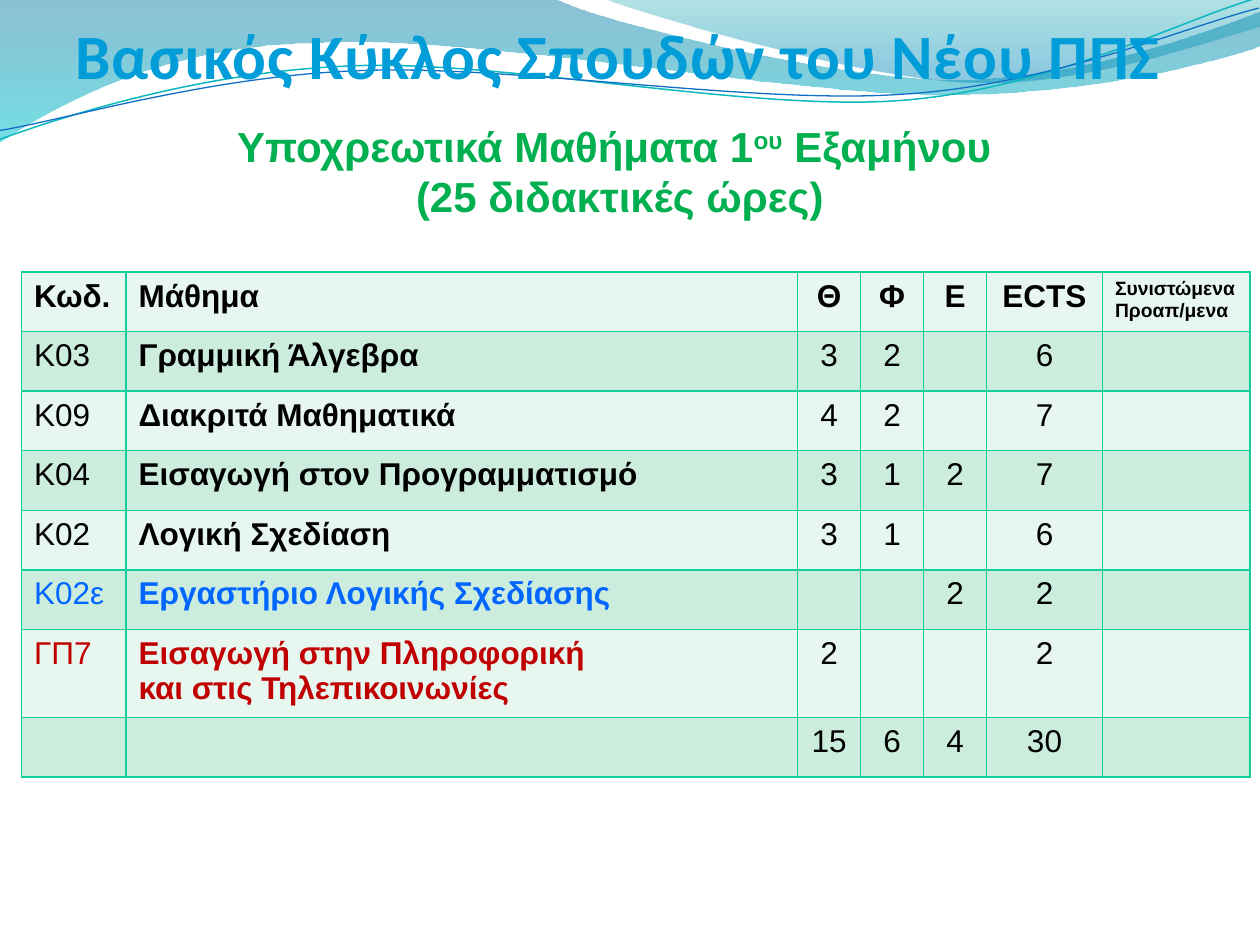
from copy import deepcopy
from dataclasses import dataclass
from lxml.etree import SubElement as Sub
from pptx import Presentation
from pptx.dml.color import RGBColor as RGB
from pptx.enum.text import MSO_ANCHOR as Anchor, PP_ALIGN as Align
from pptx.oxml.ns import qn
from pptx.util import Inches, Pt


@dataclass
class Theme:
    title: str = "009DD9"
    green: str = "00B050"
    black: str = "000000"
    blue: str = "0066FF"
    red: str = "C00000"
    grid: str = "10CF9B"
    bands: tuple = ("E7F6EF", "CCEDDE")
    head: int = 36
    sub: int = 24
    body: int = 18
    note: int = 11


theme = Theme()


def style(font, color, **attrs):
    """Set the colour and any other font attributes."""
    font.color.rgb = RGB.from_string(color)
    for name, value in attrs.items():
        setattr(font, name, value)


def draw(shapes, parts, close):
    """Draw line parts (x, y) and cubic parts (three x, y pairs)."""
    points = [(Inches(part[i]), Inches(part[i + 1]))
              for part in parts for i in range(0, len(part), 2)]
    pen = shapes.build_freeform(*points[0])
    pen.add_line_segments(points[1:], close=close)
    shape = pen.convert_to_shape()
    lines = iter(list(shape._element.iter(qn("a:lnTo"))))
    for part in parts[1:]:
        first = next(lines)
        if len(part) == 6:
            first.tag
            curve = first.getparent().makeelement(qn("a:cubicBezTo"))
            first.addprevious(curve)
            for line in (first, next(lines), next(lines)):
                curve.append(line[0])
                line.getparent().remove(line)
    return shape


deck = Presentation()
deck.slide_width, deck.slide_height = Inches(10), Inches(7.5)
slide = deck.slides.add_slide(deck.slide_layouts[5])
shapes = slide.shapes

# Filled waves: outline and gradient stops (place, colour, opacity)
waves = [
    ([(0, -0.01), (4.4, -0.01), (4.76, 0.17, 6.64, 0.63, 7.58, 0.63),
      (8.53, 0.63, 9.58, 0.26, 10, 0.09), (10.01, 0.36),
      (9.83, 0.44, 8.7, 0.76, 7.46, 0.75), (6.22, 0.75, 3.82, 0.28, 2.57, 0.34),
      (1.29, 0.35, 0.46, 0.83, -0.01, 1.13)],
     [(0, "0074A1", 45), (100, "00C6CF", 55)]),
    ([(4.79, -0.01), (5.09, 0.11, 6.82, 0.62, 7.69, 0.65),
      (8.56, 0.69, 9.61, 0.32, 10, 0.21), (10, 0)],
     [(0, "00A1A9", 30), (80, "008BBF", 45)]),
]
for parts, stops in waves:
    wave = draw(shapes, parts, True)
    wave.shadow.inherit = False
    wave.line.fill.background()
    wave.fill.gradient()
    grad = wave.fill._xPr.find(qn("a:gradFill"))
    for child in list(grad):
        grad.remove(child)
    group = Sub(grad, qn("a:gsLst"))
    for place, color, alpha in stops:
        stop = Sub(group, qn("a:gs"), pos=str(place * 1000))
        tint = Sub(stop, qn("a:srgbClr"), val=color)
        Sub(tint, qn("a:alpha"), val=str(alpha * 1000))
    Sub(grad, qn("a:lin"), ang="5400000", scaled="0")

# Thin curves, tilted: outline, colour, width
curves = [
    ([(-0.02, 0.87), (0.47, 0.72, 1.58, 0.41, 2.78, 0.42),
      (3.96, 0.42, 5.91, 0.93, 7.12, 0.9), (8.32, 0.87, 9.4, 0.36, 10, 0.22)],
     "0AB8BF", 0.85),
    ([(-0.02, 0.8), (0.46, 0.75, 1.64, 0.45, 2.83, 0.46),
      (4.03, 0.46, 5.96, 0.88, 7.16, 0.85), (8.35, 0.83, 9.42, 0.42, 10.01, 0.3)],
     "0F6FC6", 0.75),
]
for parts, color, width in curves:
    curve = draw(shapes, parts, False)
    curve.shadow.inherit = False
    curve.fill.background()
    curve.line.color.rgb = RGB.from_string(color)
    curve.line.width = Pt(width)
    curve.rotation = 357.3

# Title, brought in front of the waves
title = shapes.title
shapes._spTree.append(title._element)
spots = {"left": 0.5, "top": 0.08, "width": 9, "height": 0.75}
for name, value in spots.items():
    setattr(title, name, Inches(value))
frame = title.text_frame
frame.text = "Βασικός Κύκλος Σπουδών του Νέου ΠΠΣ"
frame.vertical_anchor = Anchor.TOP
para = frame.paragraphs[0]
para.alignment = Align.LEFT
run = para.runs[0]
style(run.font, theme.title, name="Calibri", size=Pt(theme.head), bold=True)
run.font._element.set("spc", "50")

# Subtitle
box = shapes.add_textbox(Inches(0.17), Inches(0.92), Inches(9.5), Inches(0.87))
frame = box.text_frame
frame.word_wrap = True
frame.vertical_anchor = Anchor.MIDDLE
para = frame.paragraphs[0]
para.alignment = Align.CENTER
for text in ("Υποχρεωτικά Μαθήματα 1", "ου", " Εξαμήνου ", "(25 διδακτικές ώρες)"):
    if text.startswith("("):
        para.add_line_break()
    run = para.add_run()
    run.text = text
    style(run.font, theme.green, name="Arial", size=Pt(theme.sub), bold=True)
    if text == "ου":
        run.font._element.set("baseline", "30000")

# Course table
rows = [
    ("Κωδ.", "Μάθημα", "Θ", "Φ", "Ε", "ECTS", "Συνιστώμενα Προαπ/μενα"),
    ("Κ03", "Γραμμική Άλγεβρα", "3", "2", "", "6", ""),
    ("Κ09", "Διακριτά Μαθηματικά", "4", "2", "", "7", ""),
    ("Κ04", "Εισαγωγή στον Προγραμματισμό", "3", "1", "2", "7", ""),
    ("Κ02", "Λογική Σχεδίαση", "3", "1", "", "6", ""),
    ("Κ02ε", "Εργαστήριο Λογικής Σχεδίασης", "", "", "2", "2", ""),
    ("ΓΠ7", "Εισαγωγή στην Πληροφορική \vκαι στις Τηλεπικοινωνίες",
     "2", "", "", "2", ""),
    ("", "", "15", "6", "4", "30", ""),
]
widths = (0.83, 5.33, 0.5, 0.5, 0.5, 0.92, 1.17)
tints = {"Κ02ε": theme.blue, "ΓΠ7": theme.red}
table = shapes.add_table(len(rows), len(widths), Inches(0.17), Inches(2.16),
                         Inches(sum(widths)), Inches(3.78)).table
for col, width in zip(table.columns, widths):
    col.width = Inches(width)
for r, row in enumerate(rows):
    for c, text in enumerate(row):
        cell = table.cell(r, c)
        cell.fill.solid()
        cell.fill.fore_color.rgb = RGB.from_string(theme.bands[r % 2])
        props = cell._tc.get_or_add_tcPr()
        for i, side in enumerate(("lnL", "lnR", "lnT", "lnB")):
            edge = Sub(props, qn("a:" + side), w=str(Pt(1)))
            Sub(Sub(edge, qn("a:solidFill")), qn("a:srgbClr"), val=theme.grid)
            props.insert(i, edge)
        cell.text = text
        para = cell.text_frame.paragraphs[0]
        para.alignment = Align.CENTER if 2 <= c <= 5 else Align.LEFT
        size = theme.note if r == 0 and c == 6 else theme.body
        color = tints.get(row[0], theme.black) if c < 2 else theme.black
        for run in para.runs:
            style(run.font, color, name="Arial", size=Pt(size),
                  bold=r == 0 or c == 1)
        # A line break takes the format of its text
        for gap in para._p.findall(qn("a:br")):
            gap.append(deepcopy(para.runs[0].font._element))

deck.save("out.pptx")
